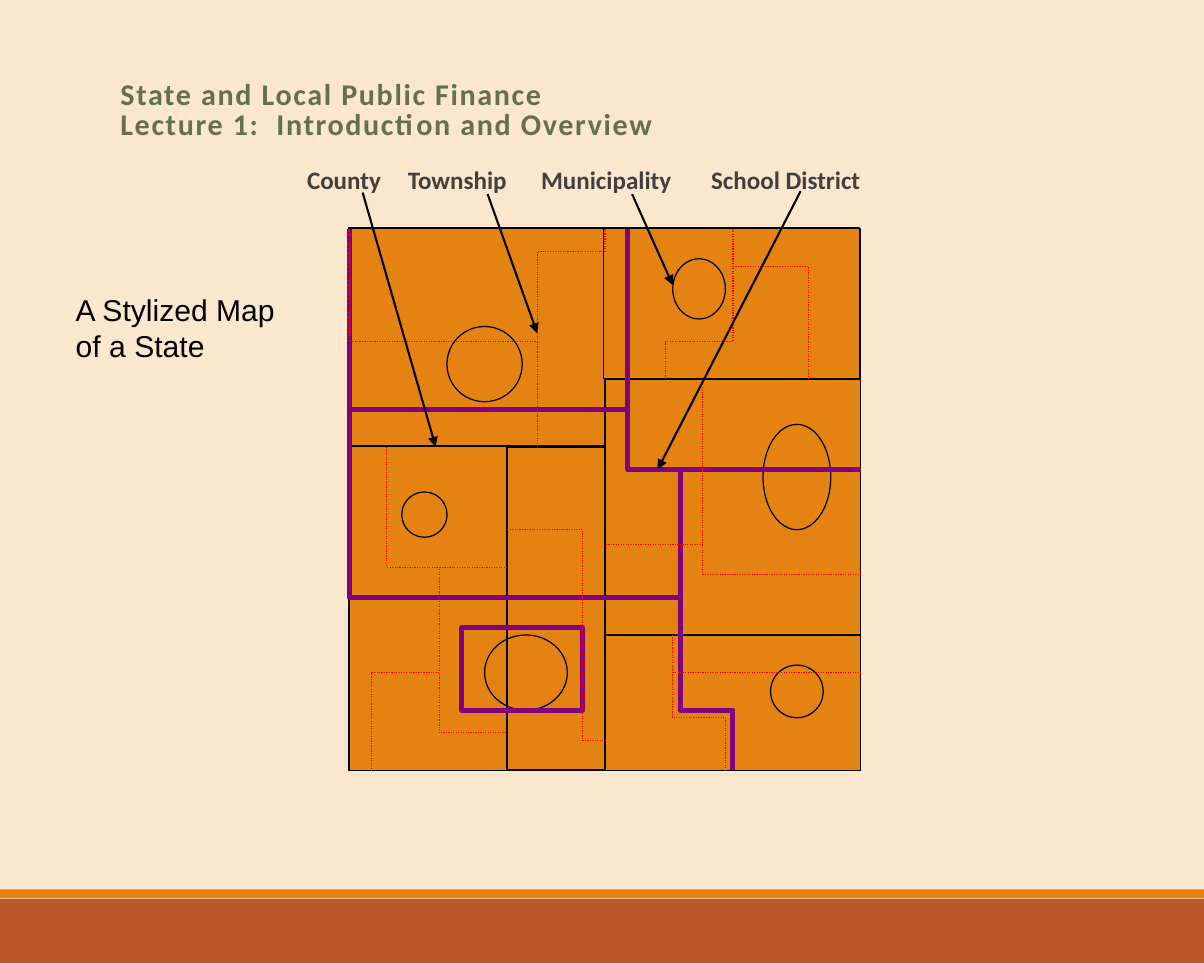
from dataclasses import dataclass

from pptx import Presentation
from pptx.dml.color import RGBColor as RGB
from pptx.enum.dml import MSO_LINE_DASH_STYLE as Dash
from pptx.enum.shapes import MSO_CONNECTOR as Link, MSO_SHAPE as Kind
from pptx.oxml.ns import qn
from pptx.util import Pt
from lxml import etree

PX = 5715  # EMU in one px, 160 px to the inch


@dataclass(frozen=True)
class Theme:
    sand: str = "FBE6CE"
    land: str = "E48312"
    rust: str = "BD582C"
    moss: str = "637052"
    gray: str = "404040"
    black: str = "000000"
    red: str = "FF0000"
    plum: str = "800080"
    head: int = 18
    label: int = 15
    thin: float = 0.75
    mid: float = 1.25
    thick: float = 3
    serif: str = "Calibri"
    sans: str = "Arial"


T = Theme()

# Map parts, in px from the map's top left corner
WIDE, HIGH = 680, 720
AREAS = [  # box, filled, line width
    ((0, 0, WIDE, HIGH), True, T.thin),
    ((0, -1, 340, 290), False, T.thin),
    ((338, -1, 340, 200), True, T.thin),
    ((340, 200, 340, 340), True, T.thin),
    ((0, 290, 210, 430), True, T.thin),
    ((210, 290, 130, 430), True, T.mid),
]
TOWNS = [  # box, filled
    ((130, 130, 100, 100), True),
    ((550, 260, 90, 140), True),
    ((180, 540, 110, 100), False),
    ((430, 40, 70, 80), True),
    ((560, 580, 70, 70), True),
    ((70, 350, 60, 60), True),
]
SCHOOLS = [
    [(0, 0), (0, 240), (370, 240), (370, 0)],
    [(370, 0), (370, 320), (WIDE, 320)],
    [(0, 240), (0, 490), (440, 490), (440, 320)],
    [(440, 320), (440, 640), (510, 640), (510, HIGH)],
    [(150, 530), (150, 640), (310, 640), (310, 530), (150, 530)],
]
SHIPS = [
    [(0, 0), (0, 150), (250, 150), (250, 30), (340, 30), (340, 0)],
    [(250, 150), (250, 290)],
    [(50, 290), (50, 450), (120, 450), (120, 590), (30, 590), (30, HIGH)],
    [(120, 450), (210, 450)],
    [(120, 590), (120, 670), (210, 670)],
    [(210, 400), (310, 400), (310, 680), (340, 680)],
    [(430, 540), (430, 650), (500, 650), (500, HIGH)],
    [(430, 590), (WIDE, 590)],
    [(470, 200), (470, 420), (340, 420)],
    [(470, 420), (470, 460), (WIDE, 460)],
    [(510, 0), (510, 150), (420, 150), (420, 200)],
    [(510, 50), (610, 50), (610, 200)],
]
LABELS = [  # text, left, arrow from, arrow to
    ("County", -56, (18, -48), (115, 290)),
    ("Township", 78, (184, -46), (250, 139)),
    ("Municipality", 255, (376, -46), (430, 75)),
    ("School District", 481, (600, -50), (410, 320)),
]


def emu(*nums):
    return [n * PX for n in nums]


def ink(line, color, width):
    line.color.rgb = RGB.from_string(color)
    line.width = Pt(width)


def block(slide, kind, box, fill=None, width=None):
    shape = slide.shapes.add_shape(kind, *emu(*box))
    shape.shadow.inherit = False
    if fill:
        shape.fill.solid()
        shape.fill.fore_color.rgb = RGB.from_string(fill)
    else:
        shape.fill.background()
    if width:
        ink(shape.line, T.black, width)
    else:
        shape.line.fill.background()


def link(slide, start, end, color, width):
    line = slide.shapes.add_connector(Link.STRAIGHT, *emu(*start, *end))
    ink(line.line, color, width)
    etree.SubElement(line._element.spPr, qn("a:effectLst"))
    return line


def trace(slide, spots, color, width):
    """Draw a line through two or more spots."""
    if len(spots) == 2:
        return link(slide, *spots, color, width)
    pen = slide.shapes.build_freeform(*emu(*spots[0]))
    pen.add_line_segments([emu(*s) for s in spots[1:]],
                          close=spots[0] == spots[-1])
    shape = pen.convert_to_shape()
    shape.shadow.inherit = False
    shape.fill.background()
    ink(shape.line, color, width)
    return shape


def write(slide, box, text, font, size, color, bold=False, pad=0, lead=1.0,
          track=0):
    frame = slide.shapes.add_textbox(*emu(*box)).text_frame
    frame.word_wrap = True
    frame.margin_left = frame.margin_right = pad * PX
    frame.margin_top = frame.margin_bottom = pad * PX // 2
    frame.text = text
    for para in frame.paragraphs:
        para.line_spacing = lead
        for run in para.runs:
            run.font.name = font
            run.font.size = Pt(size)
            run.font.bold = bold
            run.font.color.rgb = RGB.from_string(color)
            if track:
                run._r.get_or_add_rPr().set("spc", str(track))


def footer(slide, box):
    x, y, w, h = box
    block(slide, Kind.RECTANGLE, (x, y + 13, w, h - 13), T.rust)
    block(slide, Kind.RECTANGLE, (x, y, w, 12), T.land)


def title(slide, box):
    write(slide, box,
          "State and Local Public Finance\n"
          "Lecture 1:  Introduction and Overview",
          T.serif, T.head, T.moss, bold=True, lead=0.85, track=100)


def state(slide, box):
    left, top = box[:2]

    def move(x, y, *size):
        return (left + x, top + y, *size)

    # Counties and municipalities
    for area, full, width in AREAS:
        block(slide, Kind.RECTANGLE, move(*area), T.land if full else None,
              width)
    for town, full in TOWNS:
        block(slide, Kind.OVAL, move(*town), T.land if full else None, T.thin)

    # School districts and townships
    for spots in SCHOOLS:
        trace(slide, [move(*s) for s in spots], T.plum, T.thick)
    for spots in SHIPS:
        edge = trace(slide, [move(*s) for s in spots], T.red, T.thin)
        edge.line.dash_style = Dash.ROUND_DOT

    # Labels with their arrows
    for text, x, start, end in LABELS:
        write(slide, move(x, -85, 220, 42), text, T.serif, T.label, T.gray,
              bold=True)
        arrow = link(slide, move(*start), move(*end), T.black, T.mid)
        etree.SubElement(arrow.line._get_or_add_ln(), qn("a:tailEnd"),
                         type="triangle")


def main():
    deck = Presentation()
    deck.slide_width, deck.slide_height = emu(1600, 1280)
    slide = deck.slides.add_slide(deck.slide_layouts[6])
    slide.background.fill.solid()
    slide.background.fill.fore_color.rgb = RGB.from_string(T.sand)

    footer(slide, (0, 1182, 1600, 98))
    state(slide, (464, 304, WIDE, HIGH))
    title(slide, (160, 107, 1288, 84))
    write(slide, (85, 379, 301, 114), "A Stylized Map of a State",
          T.sans, T.head, T.black, pad=16)
    deck.save("out.pptx")


if __name__ == "__main__":
    main()
